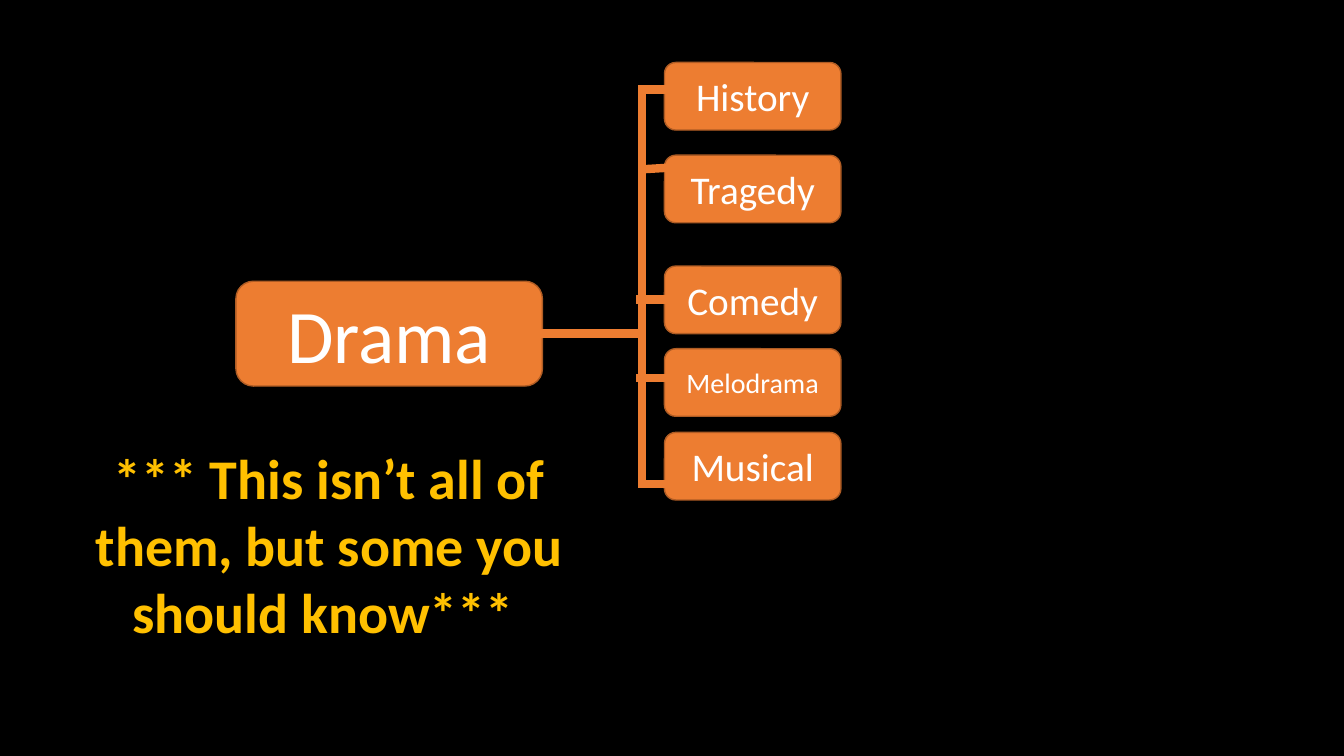
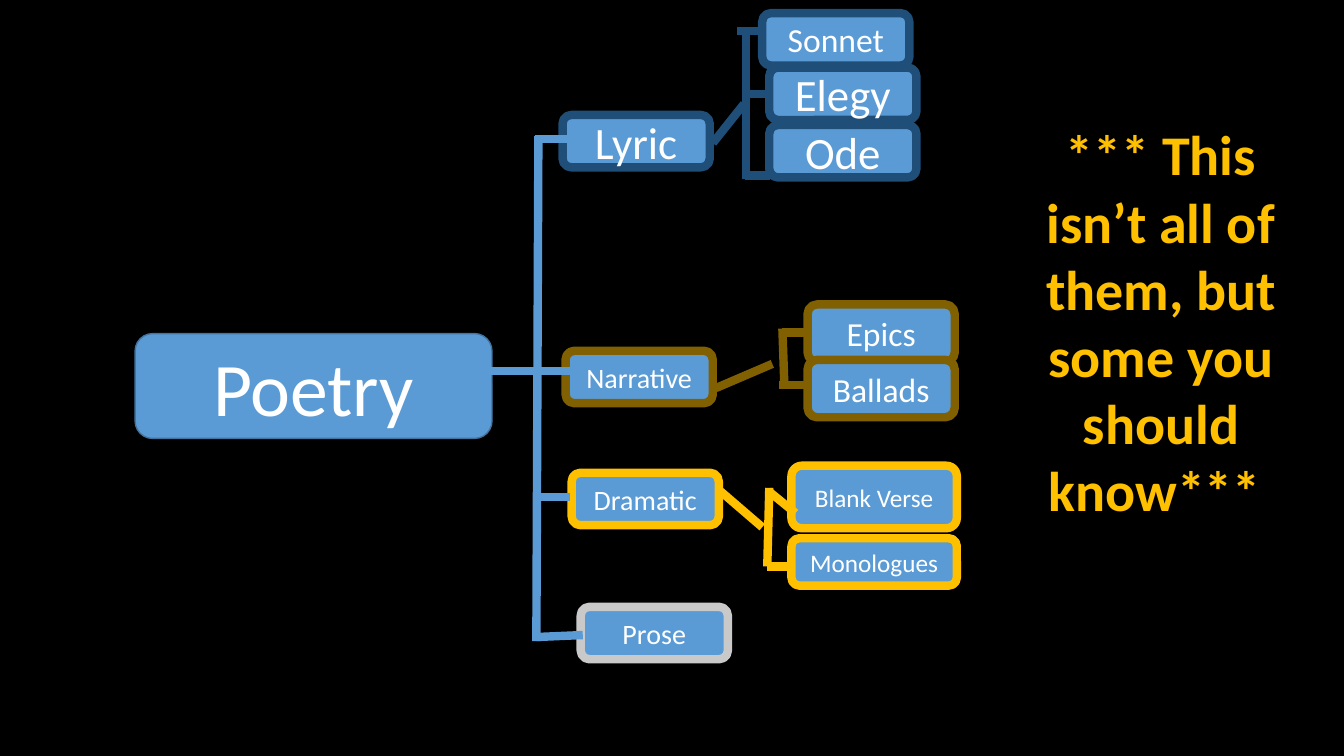
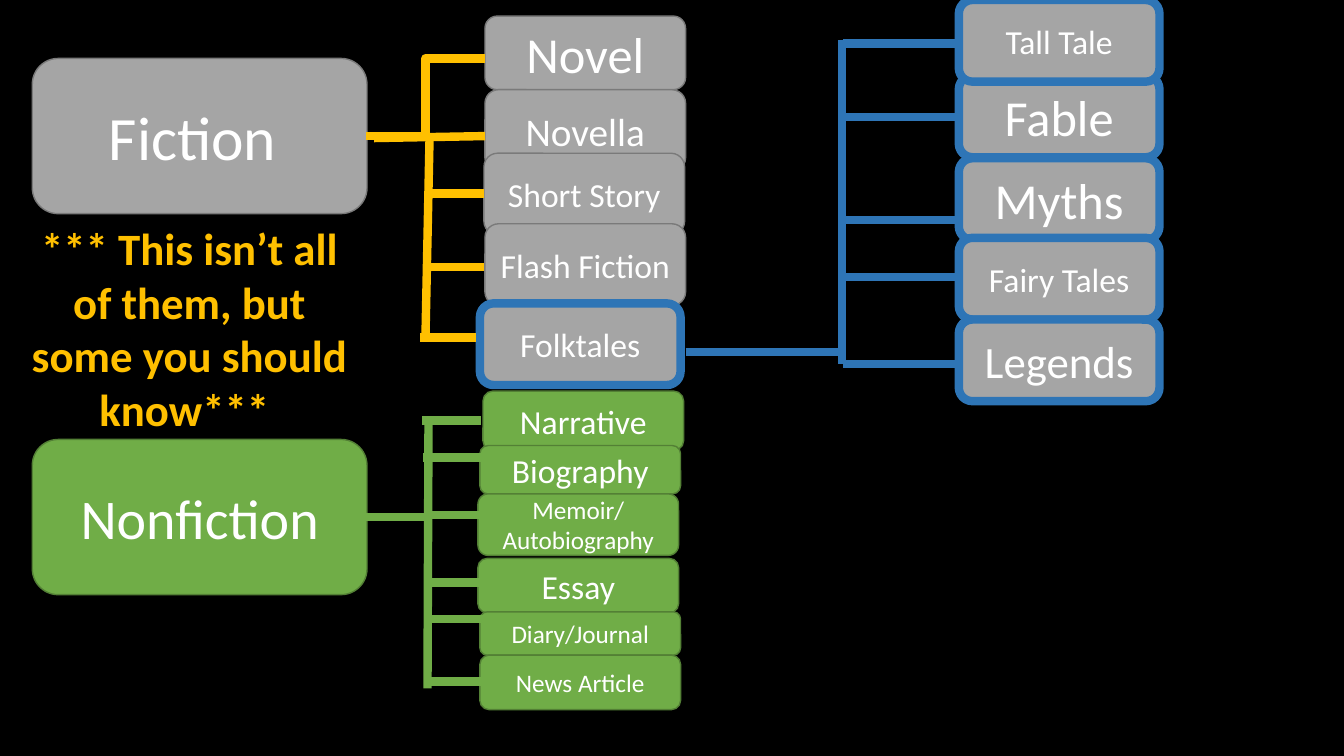
from dataclasses import dataclass, field
from typing import NamedTuple

import lxml.etree
import pptx
import pptx.dml.color
import pptx.enum.shapes
import pptx.enum.text
import pptx.oxml.ns
import pptx.slide
import pptx.text.text
import pptx.util

# Shared look
FONT = "Calibri"
BLACK, WHITE, GOLD = "000000", "FFFFFF", "FFC000"
ORANGE, BLUE, GRAY, GREEN = "ED7D31", "5B9BD5", "A5A5A5", "70AD47"
NAVY, BROWN, SILVER, OCEAN = "1F4E79", "806000", "C9C9C9", "2E75B6"
EDGE = {ORANGE: "AF5C24", BLUE: "43739E", GRAY: "7A7A7A", GREEN: "538035"}
THIN, THICK = 1, 6
NOTE_TEXT = "*** This isn’t all of them, but some you should know*** "


# Building blocks, with lengths in inches and text sizes in points
class Topic(NamedTuple):
    text: str
    size: int
    top: float
    shift: float = 0  # offset from the left edge of the column
    height: float | None = None  # when it differs from the column


@dataclass
class Column:
    fill: str
    left: float
    width: float
    height: float
    topics: list[Topic]
    border: str | None = None  # thick border; thin darker edge without it


class Line(NamedTuple):
    x1: float
    y1: float
    x2: float
    y2: float


class Rung(NamedTuple):
    x: float
    y: float


@dataclass
class Bracket:
    color: str
    lines: list[Line]
    reach: float = 0  # length of every rung
    rungs: list[Rung] = field(default_factory=list)
    elbow: Line | None = None


class Note(NamedTuple):
    left: float
    top: float
    width: float
    height: float
    size: int


@dataclass
class Chart:
    columns: list[Column]
    brackets: list[Bracket]
    note: Note


def rgb(value: str) -> pptx.dml.color.RGBColor:
    return pptx.dml.color.RGBColor.from_string(value)


def write(text_frame: pptx.text.text.TextFrame, text: str, size: int,
          color: str, bold: bool = False) -> None:
    text_frame.text = text
    text_frame.word_wrap = True
    for paragraph in text_frame.paragraphs:
        paragraph.alignment = pptx.enum.text.PP_ALIGN.CENTER
        for run in paragraph.runs:
            run.font.name = FONT
            run.font.size = pptx.util.Pt(size)
            run.font.bold = bold
            run.font.color.rgb = rgb(color)


def draw_column(slide: pptx.slide.Slide, column: Column) -> None:
    for topic in column.topics:
        box = (column.left + topic.shift, topic.top, column.width,
               topic.height or column.height)
        shape = slide.shapes.add_shape(
            pptx.enum.shapes.MSO_SHAPE.ROUNDED_RECTANGLE,
            *map(pptx.util.Inches, box))
        shape.shadow.inherit = False
        shape.fill.solid()
        shape.fill.fore_color.rgb = rgb(column.fill)
        shape.line.color.rgb = rgb(column.border or EDGE[column.fill])
        shape.line.width = pptx.util.Pt(THICK if column.border else THIN)
        shape.text_frame.vertical_anchor = pptx.enum.text.MSO_ANCHOR.MIDDLE
        write(shape.text_frame, topic.text, topic.size, WHITE)


def draw_line(slide: pptx.slide.Slide, line: Line, color: str,
              kind: pptx.enum.shapes.MSO_CONNECTOR) -> None:
    connector = slide.shapes.add_connector(kind, *map(pptx.util.Inches, line))
    connector.line.color.rgb = rgb(color)
    connector.line.width = pptx.util.Pt(THICK)
    lxml.etree.SubElement(connector._element.spPr,
                          pptx.oxml.ns.qn("a:effectLst"))


def draw_bracket(slide: pptx.slide.Slide, bracket: Bracket) -> None:
    kinds = pptx.enum.shapes.MSO_CONNECTOR
    rungs = [Line(rung.x, rung.y, rung.x + bracket.reach, rung.y)
             for rung in bracket.rungs]
    for line in bracket.lines + rungs:
        draw_line(slide, line, bracket.color, kinds.STRAIGHT)
    if bracket.elbow:
        draw_line(slide, bracket.elbow, bracket.color, kinds.ELBOW)


def draw_note(slide: pptx.slide.Slide, note: Note) -> None:
    shape = slide.shapes.add_textbox(*map(pptx.util.Inches, note[:4]))
    write(shape.text_frame, NOTE_TEXT, note.size, GOLD, bold=True)
    shape.text_frame.auto_size = pptx.enum.text.MSO_AUTO_SIZE.SHAPE_TO_FIT_TEXT


# Drama
drama = Chart(
    columns=[
        Column(ORANGE, 2.34, 3.04, 1.04, [Topic("Drama", 54, 2.79)]),
        Column(ORANGE, 6.59, 1.75, 0.67, [
            Topic("History", 28, 0.62),
            Topic("Tragedy", 28, 1.54),
            Topic("Comedy", 28, 2.64),
            Topic("Melodrama", 20, 3.46),
            Topic("Musical", 28, 4.29),
        ]),
    ],
    brackets=[
        Bracket(ORANGE,
                [Line(5.37, 3.31, 6.34, 3.31), Line(6.37, 4.84, 6.37, 0.93),
                 Line(6.36, 1.68, 6.87, 1.65)],
                0.45, [Rung(6.33, 0.89), Rung(6.31, 2.97), Rung(6.31, 3.75),
                       Rung(6.34, 4.8)]),
    ],
    note=Note(0.42, 4.35, 5.69, 2.12, 40),
)

# Poetry
poetry = Chart(
    columns=[
        Column(BLUE, 1.34, 3.54, 1.04, [Topic("Poetry", 54, 3.31)]),
        Column(BLUE, 5.58, 1.46, 0.52, [Topic("Lyric", 32, 1.14)], NAVY),
        Column(BLUE, 5.61, 1.46, 0.52, [Topic("Narrative", 20, 3.48)], BROWN),
        Column(BLUE, 5.67, 1.46, 0.52, [Topic("Dramatic", 20, 4.69)], GOLD),
        Column(BLUE, 5.76, 1.46, 0.52, [Topic("Prose", 20, 6.02)], SILVER),
        Column(BLUE, 7.63, 1.46, 0.52, [
            Topic("Sonnet", 24, 0.13, shift=-0.07),
            Topic("Elegy", 32, 0.67),
            Topic("Ode", 32, 1.24),
        ], NAVY),
        Column(BLUE, 8.01, 1.46, 0.57, [
            Topic("Epics", 24, 3.02),
            Topic("Ballads", 24, 3.57),
        ], BROWN),
        Column(BLUE, 7.85, 1.64, 0.47, [
            Topic("Monologues", 18, 5.34),
            Topic("Blank Verse", 18, 4.62, height=0.62),
        ], GOLD),
    ],
    brackets=[
        Bracket(BLUE,
                [Line(4.83, 3.68, 5.49, 3.68), Line(5.34, 1.35, 5.32, 6.36),
                 Line(5.32, 6.32, 5.78, 6.3)],
                0.34, [Rung(5.31, 1.38), Rung(5.35, 3.68), Rung(5.31, 4.93)]),
        Bracket(NAVY,
                [Line(7.07, 1.42, 7.38, 1.03), Line(7.4, 1.78, 7.4, 0.29)],
                0.25, [Rung(7.31, 0.31), Rung(7.42, 0.93), Rung(7.39, 1.74)]),
        Bracket(BROWN,
                [Line(7.1, 3.85, 7.66, 3.61), Line(7.76, 3.26, 7.78, 3.84)],
                0.25, [Rung(7.76, 3.3), Rung(7.73, 3.82)]),
        Bracket(GOLD,
                [Line(7.13, 4.86, 7.56, 5.23), Line(7.63, 4.84, 7.61, 5.62),
                 Line(7.62, 4.87, 7.89, 5.09)],
                0.25, [Rung(7.61, 5.62)]),
    ],
    note=Note(9.95, 1.14, 3.13, 3.47, 40),
)

# Fiction and nonfiction
prose = Chart(
    columns=[
        Column(GRAY, 0.32, 3.32, 1.54, [Topic("Fiction ", 44, 0.58)]),
        Column(GREEN, 0.32, 3.32, 1.54, [Topic("Nonfiction", 40, 4.36)]),
        Column(GRAY, 4.81, 1.99, 0.81, [
            Topic("Novel", 36, 0.16, height=0.73),
            Topic("Novella", 28, 0.89),
            Topic("Short Story", 24, 1.52, shift=-0.01),
            Topic("Flash Fiction", 24, 2.22),
        ]),
        Column(GRAY, 4.76, 1.99, 0.81, [Topic("Folktales", 24, 3.01)], OCEAN),
        Column(GRAY, 9.51, 1.99, 0.81, [
            Topic("Myths", 36, 1.57),
            Topic("Fairy Tales", 24, 2.36),
            Topic("Legends", 32, 3.17),
            Topic("Fable", 36, 0.75),
            Topic("Tall Tale", 24, 0),
        ], OCEAN),
        Column(GREEN, 4.76, 1.99, 0.54, [
            Topic("Narrative", 24, 3.88, shift=0.03, height=0.59),
            Topic("Biography", 24, 4.42, height=0.48),
            Topic("Memoir/\nAutobiography", 18, 4.9, shift=-0.02, height=0.61),
            Topic("Essay", 24, 5.54, shift=-0.02),
            Topic("Diary/Journal", 18, 6.07, height=0.43),
            Topic("News Article", 18, 6.5),
        ]),
    ],
    brackets=[
        Bracket(GOLD,
                [Line(3.71, 1.37, 4.81, 1.35), Line(4.26, 1.39, 4.22, 3.35)],
                0.55, [Rung(4.25, 1.92), Rung(4.25, 2.65), Rung(4.17, 3.35)],
                elbow=Line(3.63, 1.35, 4.81, 0.58)),
        Bracket(OCEAN,
                [Line(6.8, 3.49, 8.35, 3.49), Line(8.35, 3.61, 8.35, 0.4)],
                1.15, [Rung(8.36, y) for y in (0.43, 1.16, 2.18, 2.75, 3.61)]),
        Bracket(GREEN,
                [Line(3.63, 5.13, 4.22, 5.13), Line(4.24, 6.83, 4.25, 4.17)],
                0.58, [Rung(4.19, 4.17), Rung(4.2, 4.54), Rung(4.24, 5.11),
                       Rung(4.24, 5.78), Rung(4.22, 6.14), Rung(4.24, 6.76)]),
    ],
    note=Note(0.1, 2.14, 3.56, 2.26, 32),
)


def main() -> None:
    presentation = pptx.Presentation()
    presentation.slide_width = pptx.util.Inches(13.33)
    presentation.slide_height = pptx.util.Inches(7.5)
    background = presentation.slide_master.background.fill
    background.solid()
    background.fore_color.rgb = rgb(BLACK)
    blank_layout = presentation.slide_layouts.get_by_name("Blank")

    for chart in (drama, poetry, prose):
        slide = presentation.slides.add_slide(blank_layout)
        for column in chart.columns:
            draw_column(slide, column)
        for bracket in chart.brackets:
            draw_bracket(slide, bracket)
        draw_note(slide, chart.note)
    presentation.save("out.pptx")


if __name__ == "__main__":
    main()
